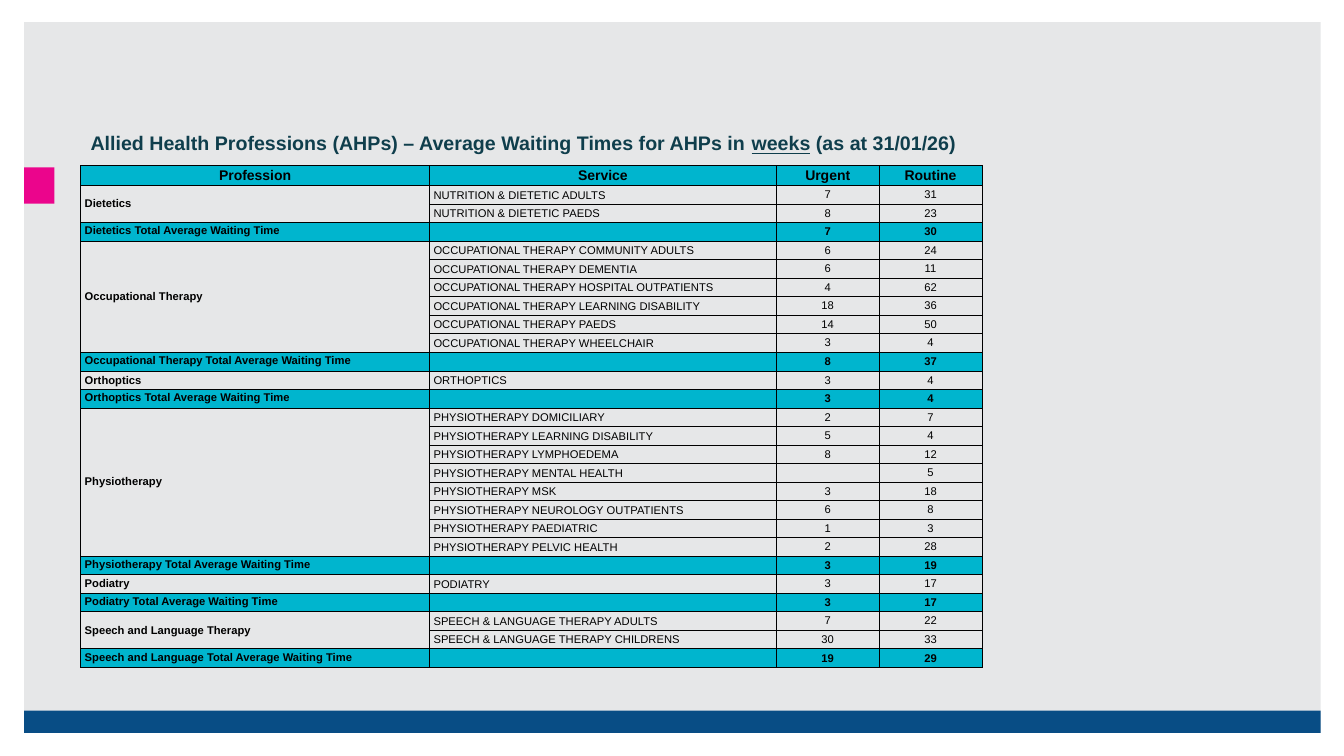
from dataclasses import dataclass
from lxml.etree import SubElement
from pptx import Presentation
from pptx.dml.color import RGBColor
from pptx.enum.shapes import MSO_SHAPE
from pptx.enum.text import MSO_ANCHOR, PP_ALIGN
from pptx.oxml import parse_xml
from pptx.oxml.ns import nsdecls, qn
from pptx.util import Inches, Pt


@dataclass(frozen=True)
class Theme:
    face: str = "Arial"
    panel: RGBColor = RGBColor(0xE6, 0xE7, 0xE8)
    navy: RGBColor = RGBColor(0x08, 0x4D, 0x85)
    pink: RGBColor = RGBColor(0xEB, 0x05, 0x8C)
    teal: RGBColor = RGBColor(0x00, 0xB5, 0xCE)
    title: RGBColor = RGBColor(0x0F, 0x3E, 0x4C)
    ink: RGBColor = RGBColor(0, 0, 0)
    title_size: Pt = Pt(14)
    head_size: Pt = Pt(10)
    body_size: Pt = Pt(8)


theme = Theme()

# Profession, total label, (service, urgent, routine) rows, total urgent and routine
groups = [
    ("Dietetics", "Dietetics", [
        ("NUTRITION & DIETETIC ADULTS", 7, 31),
        ("NUTRITION & DIETETIC PAEDS", 8, 23),
    ], 7, 30),
    ("Occupational Therapy", "Occupational Therapy", [
        ("OCCUPATIONAL THERAPY COMMUNITY ADULTS", 6, 24),
        ("OCCUPATIONAL THERAPY DEMENTIA", 6, 11),
        ("OCCUPATIONAL THERAPY HOSPITAL OUTPATIENTS", 4, 62),
        ("OCCUPATIONAL THERAPY LEARNING DISABILITY", 18, 36),
        ("OCCUPATIONAL THERAPY PAEDS", 14, 50),
        ("OCCUPATIONAL THERAPY WHEELCHAIR", 3, 4),
    ], 8, 37),
    ("Orthoptics", "Orthoptics", [("ORTHOPTICS", 3, 4)], 3, 4),
    ("Physiotherapy", "Physiotherapy", [
        ("PHYSIOTHERAPY DOMICILIARY", 2, 7),
        ("PHYSIOTHERAPY LEARNING DISABILITY", 5, 4),
        ("PHYSIOTHERAPY LYMPHOEDEMA", 8, 12),
        ("PHYSIOTHERAPY MENTAL HEALTH", "", 5),
        ("PHYSIOTHERAPY MSK", 3, 18),
        ("PHYSIOTHERAPY NEUROLOGY OUTPATIENTS", 6, 8),
        ("PHYSIOTHERAPY PAEDIATRIC", 1, 3),
        ("PHYSIOTHERAPY PELVIC HEALTH", 2, 28),
    ], 3, 19),
    ("Podiatry", "Podiatry", [("PODIATRY", 3, 17)], 3, 17),
    ("Speech and Language Therapy", "Speech and Language", [
        ("SPEECH & LANGUAGE THERAPY ADULTS", 7, 22),
        ("SPEECH & LANGUAGE THERAPY CHILDRENS", 30, 33),
    ], 19, 29),
]

# Flatten the groups into rows, noting total rows and merged spans
rows = [("Profession", "Service", "Urgent", "Routine")]
totals, spans = set(), []
for name, label, lines, urgent, routine in groups:
    spans.append((len(rows), len(rows) + len(lines) - 1))
    for i, line in enumerate(lines):
        rows.append(("" if i else name, *line))
    totals.add(len(rows))
    rows.append((f"{label} Total Average Waiting Time", "", urgent, routine))


def style(para, size, color, bold):
    font = para.font
    font.name, font.size, font.bold = theme.face, size, bold
    font.color.rgb = color


def border(cell):
    """Draw thin lines on all four sides; call before setting the fill."""
    props = cell._tc.get_or_add_tcPr()
    for side in ("lnL", "lnR", "lnT", "lnB"):
        props.append(parse_xml(
            f'<a:{side} {nsdecls("a")} w="6350"><a:solidFill>'
            f'<a:srgbClr val="{theme.ink}"/></a:solidFill></a:{side}>'))


deck = Presentation()
deck.slide_width, deck.slide_height = Inches(13.33), Inches(7.5)
slide = deck.slides.add_slide(deck.slide_layouts[6])

for left, top, width, height, color in [
    (0.24, 0.22, 12.86, 7.05, theme.panel),
    (0.24, 7.05, 12.86, 0.22, theme.navy),
    (0.24, 1.66, 0.3, 0.36, theme.pink),
]:
    block = slide.shapes.add_shape(MSO_SHAPE.RECTANGLE, Inches(left), Inches(top),
                                   Inches(width), Inches(height))
    block.shadow.inherit = False
    block.fill.solid()
    block.fill.fore_color.rgb = color
    block.line.fill.background()

title = slide.shapes.add_textbox(Inches(0.8), Inches(1.28), Inches(11.63), Inches(0.36))
title.text_frame.word_wrap = True
para = title.text_frame.paragraphs[0]
para.line_spacing = 0.9
style(para, theme.title_size, theme.title, True)
for text, under in [
    ("Allied Health Professions (AHPs) – Average Waiting Times for AHPs in ", None),
    ("weeks", True),
    (" (as at 31/01/26)", None),
]:
    run = para.add_run()
    run.text = text
    run.font.underline = under

widths = [3.46, 3.44, 1.02, 1.02]
head, full = 0.2, 4.99
table = slide.shapes.add_table(len(rows), len(widths), Inches(0.8), Inches(1.64),
                               Inches(sum(widths)), Inches(full)).table
table.first_row = table.horz_banding = False
for column, width in zip(table.columns, widths):
    column.width = Inches(width)
for r, row in enumerate(table.rows):
    row.height = Inches(head if r == 0 else (full - head) / (len(rows) - 1))

for r, values in enumerate(rows):
    for c, value in enumerate(values):
        cell = table.cell(r, c)
        border(cell)
        if r == 0 or r in totals:
            cell.fill.solid()
            cell.fill.fore_color.rgb = theme.teal
        else:
            cell.fill.background()
        label = r in totals and c == 0
        cell.vertical_anchor = MSO_ANCHOR.TOP if label else MSO_ANCHOR.MIDDLE
        cell.margin_left = Inches(0.04 if r and c < 2 else 0)
        cell.margin_right = Inches(0)
        cell.margin_top = Inches(0.01 if r == 0 or c == 1 else 0.02)
        cell.margin_bottom = Inches(0 if r == 0 or c == 1 else 0.02)
        cell.text = str(value)
        para = cell.text_frame.paragraphs[0]
        para.alignment = PP_ALIGN.CENTER if r == 0 or c > 1 else PP_ALIGN.LEFT
        size = theme.body_size if r else theme.head_size
        style(para, size, theme.ink, r == 0 or r in totals or c == 0)
        if value == "":
            # Keeps an empty cell from growing its row
            SubElement(para._p, qn("a:endParaRPr"), sz=str(int(size.pt * 100)))

for first, last in spans:
    if last > first:
        table.cell(first, 0).merge(table.cell(last, 0))

deck.save("out.pptx")
